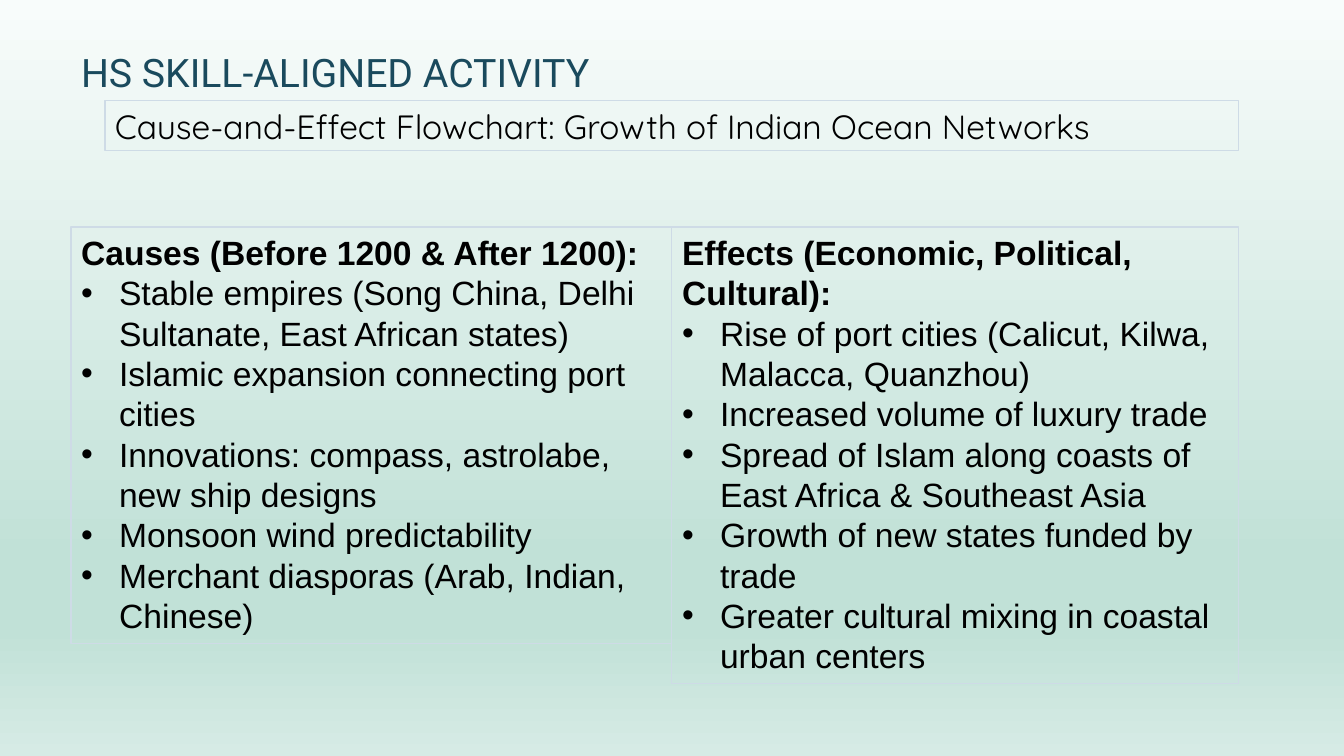
"""Build the cause-and-effect slide on Indian Ocean trade networks."""
import dataclasses

import lxml.etree
import pptx
import pptx.dml.color
import pptx.enum.text
import pptx.oxml.ns
import pptx.util


@dataclasses.dataclass(frozen=True)
class Theme:
    title_font: str = "Roboto"
    subtitle_font: str = "Quicksand"
    body_font: str = "Arial"
    title_size: float = 28
    text_size: float = 24
    body_leading: float = 28.8
    border_width: float = 0.75
    title_color: str = "1A4A5D"
    text_color: str = "000000"
    border_color: str = "CEDBE6"
    background: tuple = ((0, "F8FCFB"), (74, "C1E1D7"), (83, "C1E1D7"), (100, "D6EBE5"))


@dataclasses.dataclass(frozen=True)
class Box:
    left: int
    top: int
    width: int
    height: int


@dataclasses.dataclass(frozen=True)
class Column:
    idx: int
    box: Box
    heading: str
    items: tuple


THEME = Theme()
EMU_PER_PX = 914400 / 100.8
INDENT = 38
TITLE_BOX = Box(71, 42, 1202, 59)
SUBTITLE_BOX = Box(105, 101, 1134, 50)
COLUMNS = (
    Column(1, Box(71, 227, 601, 417), "Causes (Before 1200 & After 1200):", (
        "Stable empires (Song China, Delhi Sultanate, East African states)",
        "Islamic expansion connecting port cities",
        "Innovations: compass, astrolabe, new ship designs",
        "Monsoon wind predictability",
        "Merchant diasporas (Arab, Indian, Chinese)",
    )),
    Column(2, Box(672, 227, 567, 457), "Effects (Economic, Political, Cultural):", (
        "Rise of port cities (Calicut, Kilwa, Malacca, Quanzhou)",
        "Increased volume of luxury trade",
        "Spread of Islam along coasts of East Africa & Southeast Asia",
        "Growth of new states funded by trade",
        "Greater cultural mixing in coastal urban centers",
    )),
)


def px(n: int) -> int:
    return round(n * EMU_PER_PX)


def rgb(color: str) -> pptx.dml.color.RGBColor:
    return pptx.dml.color.RGBColor.from_string(color)


def add_xml(parent, tag: str, **attrs: str):
    return lxml.etree.SubElement(parent, pptx.oxml.ns.qn(tag), attrs)


def place(sp, box: Box) -> None:
    sp.left, sp.top = px(box.left), px(box.top)
    sp.width, sp.height = px(box.width), px(box.height)


def set_border(sp) -> None:
    sp.line.color.rgb = rgb(THEME.border_color)
    sp.line.width = pptx.util.Pt(THEME.border_width)


def set_font(p, name: str, size: float, color: str, bold: bool = False) -> None:
    p.font.name = name
    p.font.size = pptx.util.Pt(size)
    p.font.color.rgb = rgb(color)
    p.font.bold = bold


def set_frame(tf, anchor) -> None:
    tf.word_wrap = True
    tf.auto_size = pptx.enum.text.MSO_AUTO_SIZE.NONE
    tf.vertical_anchor = anchor


def set_background(s) -> None:
    fill = s.background.fill
    fill.gradient()
    fill.gradient_angle = 270
    stops = s.background._cSld.find(".//" + pptx.oxml.ns.qn("a:gsLst"))
    for stop in list(stops):
        stops.remove(stop)
    for percent, color in THEME.background:
        stop = add_xml(stops, "a:gs", pos=str(percent * 1000))
        add_xml(stop, "a:srgbClr", val=color)


def add_title(s, text: str) -> None:
    sp = s.shapes.title
    place(sp, TITLE_BOX)
    set_frame(sp.text_frame, pptx.enum.text.MSO_ANCHOR.BOTTOM)
    p = sp.text_frame.paragraphs[0]
    p.text = text
    p.alignment = pptx.enum.text.PP_ALIGN.LEFT
    p.line_spacing = 0.9
    set_font(p, THEME.title_font, THEME.title_size, THEME.title_color)


def add_subtitle(s, text: str) -> None:
    sp = s.shapes.add_textbox(0, 0, 0, 0)
    place(sp, SUBTITLE_BOX)
    set_border(sp)
    set_frame(sp.text_frame, pptx.enum.text.MSO_ANCHOR.TOP)
    p = sp.text_frame.paragraphs[0]
    p.text = text
    set_font(p, THEME.subtitle_font, THEME.text_size, THEME.text_color)


def fill_column(s, column: Column) -> None:
    sp = s.placeholders[column.idx]
    place(sp, column.box)
    set_border(sp)
    tf = sp.text_frame
    set_frame(tf, pptx.enum.text.MSO_ANCHOR.TOP)
    tf.text = "\n".join((column.heading, *column.items))
    for i, p in enumerate(tf.paragraphs):
        is_heading = i == 0
        p.space_before = pptx.util.Pt(0)
        p.line_spacing = pptx.util.Pt(THEME.body_leading)
        set_font(p, THEME.body_font, THEME.text_size, THEME.text_color, is_heading)
        indent = 0 if is_heading else px(INDENT)
        pPr = p._p.get_or_add_pPr()
        pPr.set("marL", str(indent))
        pPr.set("indent", str(-indent))
        bullet = lxml.etree.Element(pptx.oxml.ns.qn("a:buNone" if is_heading else "a:buChar"))
        if not is_heading:
            bullet.set("char", "•")
        pPr.find(pptx.oxml.ns.qn("a:defRPr")).addprevious(bullet)


def main() -> None:
    prs = pptx.Presentation()
    prs.slide_width, prs.slide_height = px(1344), px(756)
    s = prs.slides.add_slide(prs.slide_layouts.get_by_name("Two Content"))
    set_background(s)
    add_title(s, "HS SKILL-ALIGNED ACTIVITY")
    add_subtitle(s, "Cause-and-Effect Flowchart: Growth of Indian Ocean Networks")
    for column in COLUMNS:
        fill_column(s, column)
    prs.save("out.pptx")


if __name__ == "__main__":
    main()
